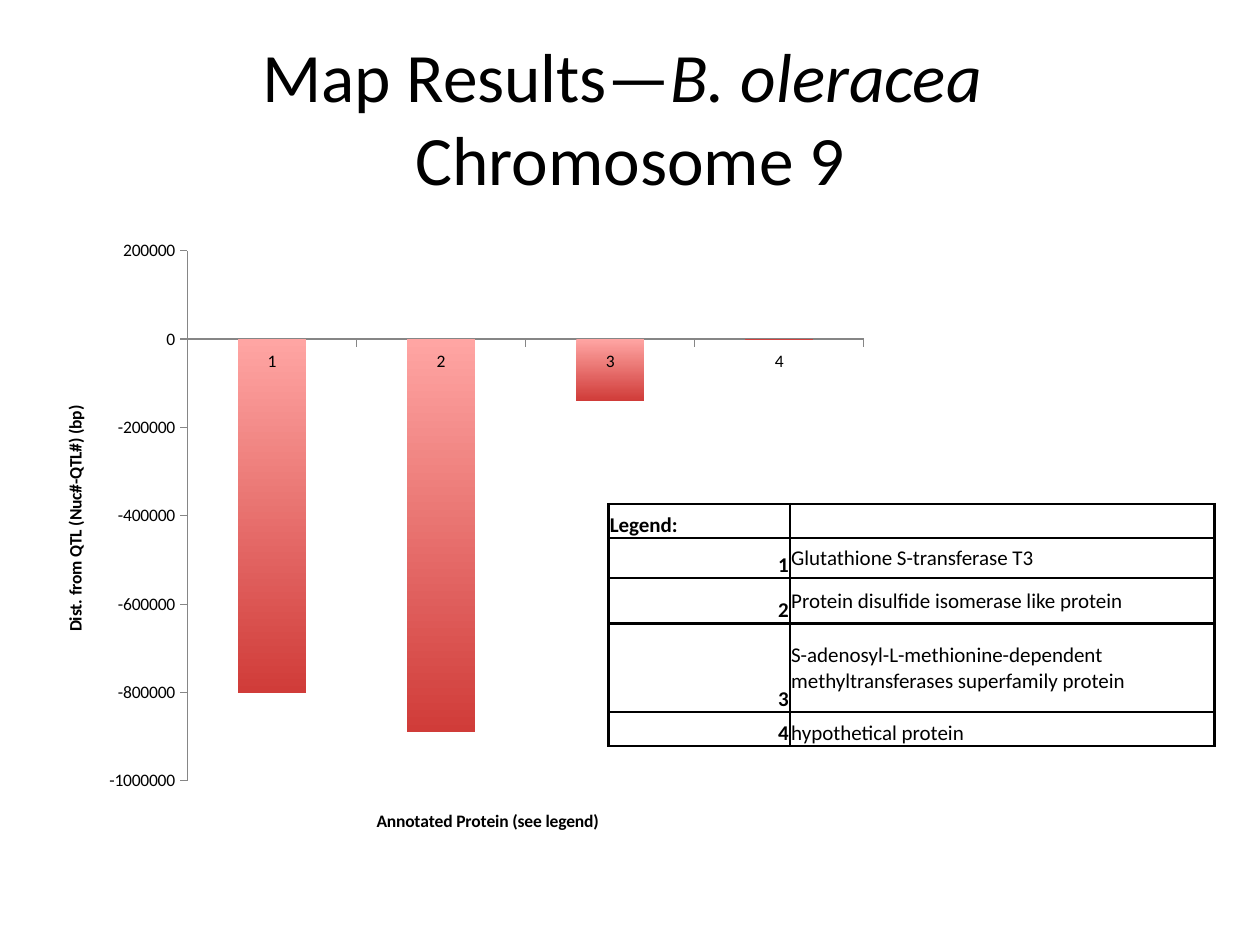
from lxml import etree
from pptx import Presentation
from pptx.chart.data import CategoryChartData
from pptx.dml.color import RGBColor
from pptx.enum.chart import XL_CHART_TYPE, XL_TICK_MARK
from pptx.enum.text import MSO_ANCHOR, PP_ALIGN
from pptx.oxml.ns import qn
from pptx.util import Inches, Pt

COLUMN = XL_CHART_TYPE.COLUMN_CLUSTERED
OUT, NONE = XL_TICK_MARK.OUTSIDE, XL_TICK_MARK.NONE
MIDDLE, BOTTOM = MSO_ANCHOR.MIDDLE, MSO_ANCHOR.BOTTOM
LEFT, CENTER, RIGHT = PP_ALIGN.LEFT, PP_ALIGN.CENTER, PP_ALIGN.RIGHT
BLACK = RGBColor(0x00, 0x00, 0x00)
GREY = RGBColor(0x86, 0x86, 0x86)
PINK = RGBColor(0xFF, 0xA5, 0xA3)
RED = RGBColor(0xD0, 0x3C, 0x39)
FONT = "Calibri"

TITLE = [[("Map Results—", False), ("B. oleracea ", True)],
         [("Chromosome 9", False)]]
DISTS = {"1": -800000, "2": -890000, "3": -140000, "4": 0}
CAT_NAME = "Annotated Protein (see legend)"
VAL_NAME = "Dist. from QTL (Nuc#-QTL#) (bp)"
COLS = [1.44, 3.37]
# row height, label, protein, anchor of the protein cell
LEGEND = [
    (0.27, "Legend:", "", BOTTOM),
    (0.32, "1", "Glutathione S-transferase T3", MIDDLE),
    (0.36, "2", "Protein disulfide isomerase like protein", MIDDLE),
    (0.70, "3", "S-adenosyl-L-methionine-dependent "
                "methyltransferases superfamily protein", MIDDLE),
    (0.27, "4", "hypothetical protein", BOTTOM),
]


def style(font, size, bold=False, italic=False):
    font.name, font.size = FONT, Pt(size)
    font.bold, font.italic = bold, italic
    font.color.rgb = BLACK


def add_run(para, text, size, bold=False, italic=False):
    run = para.add_run()
    run.text = text
    style(run.font, size, bold, italic)


def place(node, index, **spots):
    """Give a chart part a manual layout, in fractions of the chart."""
    for old in node.findall(qn("c:layout")):
        node.remove(old)
    layout = etree.Element(qn("c:layout"))
    manual = etree.SubElement(layout, qn("c:manualLayout"))
    if "w" in spots:
        etree.SubElement(manual, qn("c:layoutTarget"), val="inner")
    for key in ("x", "y"):
        etree.SubElement(manual, qn(f"c:{key}Mode"), val="edge")
    for key, val in spots.items():
        etree.SubElement(manual, qn(f"c:{key}"), val=str(val))
    node.insert(index, layout)


def add_title(slide):
    box = slide.shapes.add_textbox(Inches(0.5), Inches(0.3), Inches(9), Inches(1.25))
    frame = box.text_frame
    frame.word_wrap = True
    frame.vertical_anchor = MIDDLE
    para = frame.paragraphs[0]
    para.alignment = CENTER
    for num, line in enumerate(TITLE):
        if num:
            para.add_line_break()
        for text, italic in line:
            add_run(para, text, 39.6, italic=italic)


def set_axis(axis, name, x, y):
    axis.has_major_gridlines = False
    axis.major_tick_mark, axis.minor_tick_mark = OUT, NONE
    axis.format.line.color.rgb = GREY
    axis.format.line.width = Pt(0.75)
    title = axis.axis_title
    add_run(title.text_frame.paragraphs[0], name, 10, bold=True)
    place(title._element, 1, x=x, y=y)


def add_bars(slide):
    data = CategoryChartData()
    data.categories = list(DISTS)
    data.add_series("Series 1", list(DISTS.values()))
    chart = slide.shapes.add_chart(COLUMN, Inches(0.28), Inches(1.79),
                                   Inches(6.71), Inches(5.01), data).chart
    chart.has_legend = chart.has_title = False
    style(chart.font, 10)
    set_axis(chart.category_axis, CAT_NAME, 0.4, 0.92)
    set_axis(chart.value_axis, VAL_NAME, 0.03, 0.28)
    axis = chart.value_axis
    axis.minimum_scale, axis.maximum_scale = -1000000, 200000
    axis.major_unit = 200000
    axis.tick_labels.number_format = "General"
    axis.tick_labels.number_format_is_linked = False

    plot = chart.plots[0]
    plot.gap_width, plot.vary_by_categories = 150, False
    bars = plot.series[0]
    bars.invert_if_negative = False
    fill = bars.format.fill
    fill.gradient()
    fill.gradient_angle = 270
    for stop, color in zip(fill.gradient_stops, (PINK, RED)):
        stop.color.rgb = color
    area = chart._chartSpace.find(".//" + qn("c:plotArea"))
    place(area, 0, x=0.18, y=0.04, w=0.8, h=0.84)


def set_cell(cell, text, anchor, align, bold):
    cell.margin_left = cell.margin_right = cell.margin_top = Inches(0.01)
    cell.margin_bottom = 0
    cell.vertical_anchor = anchor
    props = cell._tc.get_or_add_tcPr()
    for side in "LRTB":
        line = etree.SubElement(props, qn(f"a:ln{side}"), w=str(Pt(1.5)))
        solid = etree.SubElement(line, qn("a:solidFill"))
        etree.SubElement(solid, qn("a:srgbClr"), val=str(BLACK))
    cell.fill.background()
    para = cell.text_frame.paragraphs[0]
    para.alignment = align
    if text:
        add_run(para, text, 12, bold)
    else:
        para._p.get_or_add_endParaRPr().set("sz", "1200")


def add_legend(slide):
    high = sum(row[0] for row in LEGEND)
    table = slide.shapes.add_table(len(LEGEND), len(COLS), Inches(4.83), Inches(4),
                                   Inches(sum(COLS)), Inches(high)).table
    table.first_row = table.horz_banding = False
    for col, width in zip(table.columns, COLS):
        col.width = Inches(width)
    for num, (height, label, protein, anchor) in enumerate(LEGEND):
        table.rows[num].height = Inches(height)
        align = RIGHT if num else LEFT
        set_cell(table.cell(num, 0), label, BOTTOM, align, True)
        set_cell(table.cell(num, 1), protein, anchor, LEFT, False)


def main():
    deck = Presentation()
    deck.slide_width, deck.slide_height = Inches(10), Inches(7.5)
    slide = deck.slides.add_slide(deck.slide_layouts[6])
    add_title(slide)
    add_bars(slide)
    add_legend(slide)
    deck.save("out.pptx")


if __name__ == "__main__":
    main()
